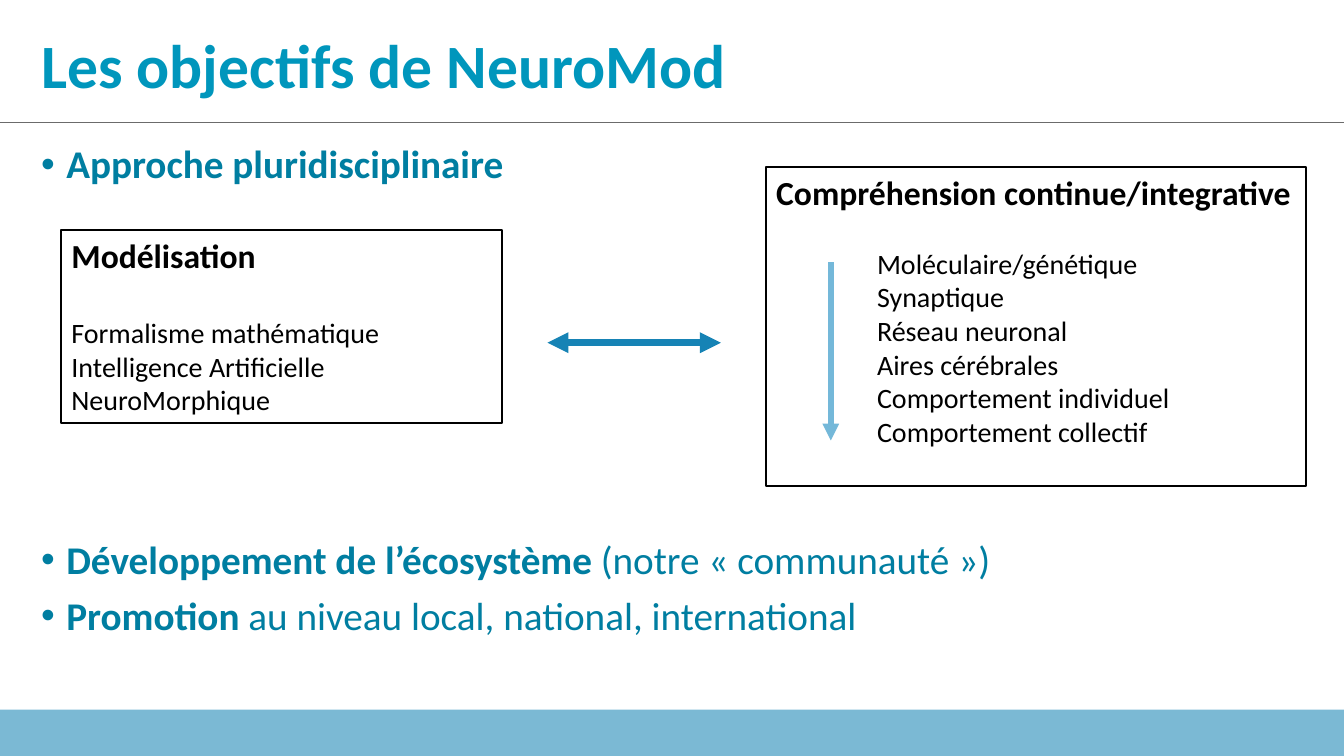
from pptx import Presentation
from pptx.dml.color import RGBColor
from pptx.enum.shapes import MSO_CONNECTOR as LINK, MSO_SHAPE as SHAPE
from pptx.enum.text import MSO_ANCHOR as ANCHOR, PP_ALIGN as ALIGN
from pptx.oxml.ns import qn
from pptx.util import Inches, Pt
from lxml.etree import SubElement

FONT = "Calibri"
BLACK, TEAL, TITLE = "000000", "007EA1", "0096BC"


def color(code):
    return RGBColor.from_string(code)


def write(frame, runs, size, ink, first=False, before=0, spacing=1.0,
          indent=0, bullet=False):
    """Add one paragraph; runs are (text, bold) pairs."""
    para = frame.paragraphs[0] if first else frame.add_paragraph()
    para.alignment = ALIGN.LEFT
    para.line_spacing = spacing
    para.space_before = Pt(before)
    props = para._p.get_or_add_pPr()
    if indent:
        props.set("marL", str(Inches(indent)))
    if bullet:
        props.set("indent", str(-Inches(indent)))
        SubElement(props, qn("a:buFont"), typeface="Arial")
        SubElement(props, qn("a:buChar"), char="•")
    for text, bold in runs:
        run = para.add_run()
        run.text = text
        run.font.name = FONT
        run.font.size = Pt(size)
        run.font.bold = bold
        run.font.color.rgb = color(ink)


def add_text(slide, left, top, width, height, anchor=ANCHOR.TOP):
    box = slide.shapes.add_textbox(*map(Inches, (left, top, width, height)))
    box.text_frame.word_wrap = True
    box.text_frame.vertical_anchor = anchor
    return box.text_frame


def add_rect(slide, left, top, width, height):
    rect = slide.shapes.add_shape(
        SHAPE.RECTANGLE, *map(Inches, (left, top, width, height)))
    rect.shadow.inherit = False
    return rect


def add_panel(slide, place, head, items, gap, indent=0):
    """Draw an outlined box with a bold heading over a list."""
    panel = add_rect(slide, *place)
    panel.fill.background()
    panel.line.color.rgb = color(BLACK)
    panel.line.width = Pt(1.5)
    frame = panel.text_frame
    frame.word_wrap = True
    frame.vertical_anchor = ANCHOR.TOP
    write(frame, [(head, True)], 24, BLACK, first=True)
    for i, item in enumerate(items):
        write(frame, [(item, False)], 20, BLACK,
              before=0 if i else gap, indent=indent)


def add_line(slide, start, end, ink, width, ends=()):
    """Draw a line; ends names the arrowhead tags, headEnd before tailEnd."""
    line = slide.shapes.add_connector(
        LINK.STRAIGHT, *map(Inches, (*start, *end)))
    line.line.color.rgb = color(ink)
    line.line.width = Pt(width)
    for tag in ends:
        SubElement(line.line._get_or_add_ln(), qn(f"a:{tag}"), type="triangle")
    SubElement(line._element.spPr, qn("a:effectLst"))


def add_band(slide):
    band = add_rect(slide, 0, 7.04, 13.33, 0.46)
    band.fill.solid()
    band.fill.fore_color.rgb = color("1483B4")
    band.line.fill.background()
    tint = band._element.spPr.find(qn("a:solidFill"))[0]
    SubElement(tint, qn("a:alpha"), val="56000")


def add_goals(slide):
    goals = [
        (0, [("Approche pluridisciplinaire", True)]),
        (252, [("Développement de l’écosystème ", True),
               ("(notre « communauté »)", False)]),
        (10, [("Promotion ", True),
              ("au niveau local, national, international", False)]),
    ]
    frame = add_text(slide, 0.31, 1.39, 12.64, 5.6)
    for i, (before, runs) in enumerate(goals):
        write(frame, runs, 28, TEAL, first=i == 0, before=before,
              spacing=0.9, indent=0.25, bullet=True)


def main():
    deck = Presentation()
    deck.slide_width, deck.slide_height = Inches(13.33), Inches(7.5)
    slide = deck.slides.add_slide(deck.slide_layouts[6])

    add_line(slide, (0, 1.21), (13.33, 1.21), "6B6B6B", 0.5)
    add_band(slide)
    add_goals(slide)
    title = add_text(slide, 0.31, 0.26, 11.19, 0.84, ANCHOR.MIDDLE)
    write(title, [("Les objectifs de NeuroMod", True)], 44, TITLE,
          first=True, spacing=0.9)

    add_panel(slide, (0.61, 2.28, 4.37, 1.92), "Modélisation",
              ["Formalisme mathématique", "Intelligence Artificielle",
               "NeuroMorphique"], gap=29)
    add_line(slide, (5.43, 3.4), (7.15, 3.4), "1683B5", 5,
             ("headEnd", "tailEnd"))
    add_panel(slide, (7.6, 1.66, 5.35, 3.16),
              "Compréhension continue/integrative",
              ["Moléculaire/génétique", "Synaptique", "Réseau neuronal",
               "Aires cérébrales", "Comportement individuel",
               "Comportement collectif"], gap=24, indent=1)
    add_line(slide, (8.24, 2.6), (8.24, 4.37), "74B8D9", 4, ("tailEnd",))
    deck.save("out.pptx")


if __name__ == "__main__":
    main()
